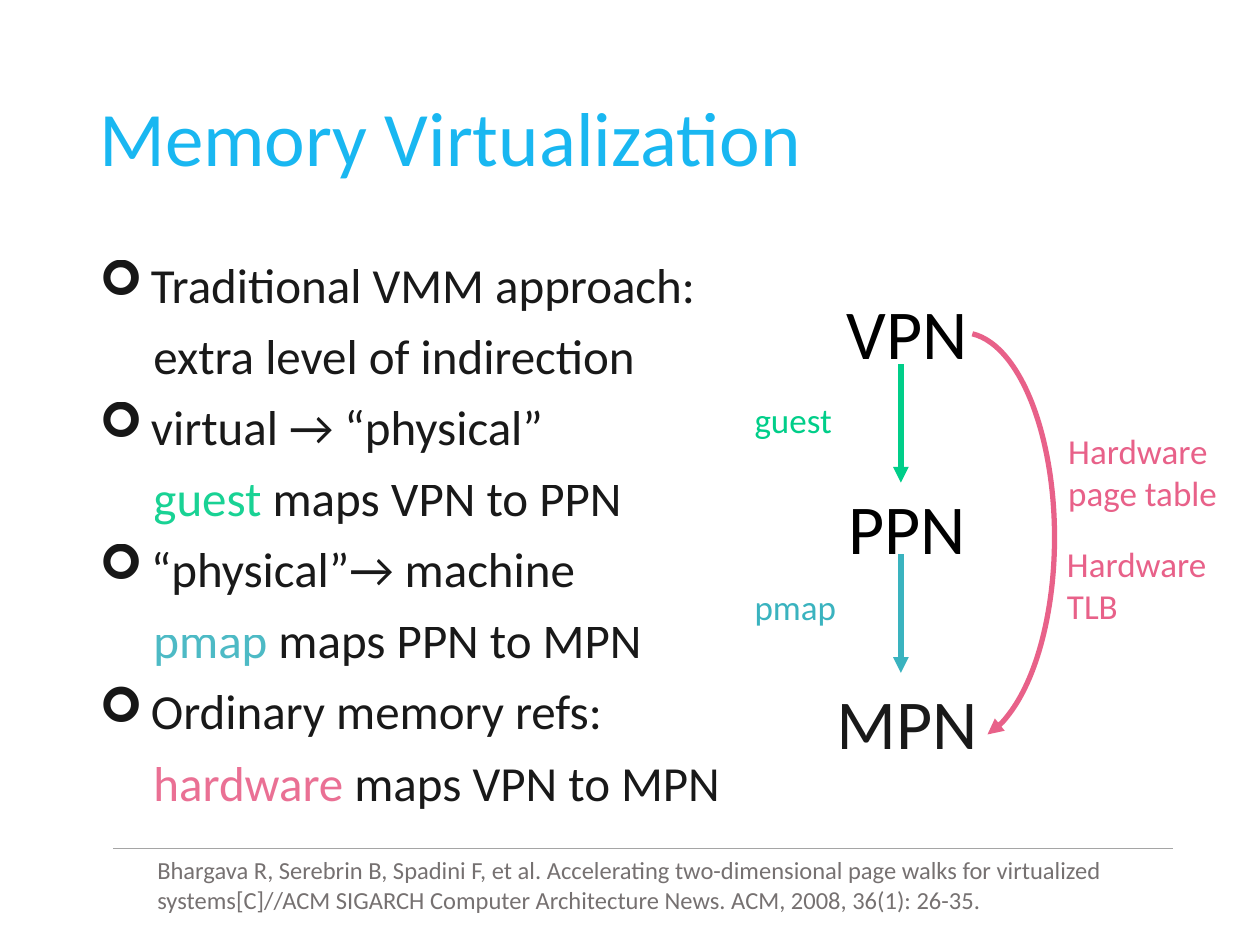
from pptx import Presentation
from pptx.util import Inches, Pt
from pptx.dml.color import RGBColor
from pptx.enum.shapes import MSO_CONNECTOR, MSO_SHAPE
from pptx.enum.text import MSO_ANCHOR, PP_ALIGN
from pptx.oxml.ns import qn
from lxml.etree import SubElement

THEME = {
    "font": "Calibri",
    "ink": "000000", "title": "00B0F0", "guest": "00CE89", "pmap": "3AB3BF",
    "hard": "E86189", "rule": "A5A5A5", "cite": "767171",
    "sizes": {"title": 44, "node": 40, "body": 28, "label": 20, "cite": 14},
}

deck = Presentation()
deck.slide_width, deck.slide_height = Inches(10), Inches(7.5)
slide = deck.slides.add_slide(deck.slide_layouts[6])
COL = deck.slide_width / 100
ROW = deck.slide_height / 75


def write(box, size, lines, fmt=None, alpha=100):
    """Add a text box; box is in columns and rows, a line is a list of (text, colour)."""
    left, top, wide, high = box
    frame = slide.shapes.add_textbox(
        int(left * COL), int(top * ROW), int(wide * COL), int(high * ROW)).text_frame
    frame.word_wrap = True
    for i, line in enumerate(lines):
        para = frame.paragraphs[0] if i == 0 else frame.add_paragraph()
        for key, val in (fmt or {}).items():
            setattr(para, key, val)
        for text, tint in line:
            run = para.add_run()
            run.text = text
            look = {"name": THEME["font"], "size": Pt(THEME["sizes"][size])}
            for key, val in look.items():
                setattr(run.font, key, val)
            run.font.color.rgb = RGBColor.from_string(THEME[tint])
            if alpha < 100:
                tone = run.font.fill._xPr.find(".//" + qn("a:srgbClr"))
                SubElement(tone, qn("a:alpha"), val=str(alpha * 1000))
    return frame


def stroke(shape, tint, width, arrow=False):
    shape.line.color.rgb = RGBColor.from_string(THEME[tint])
    shape.line.width = Pt(width)
    if arrow:
        SubElement(shape.line._get_or_add_ln(), qn("a:tailEnd"), type="triangle")
    SubElement(shape._element.spPr, qn("a:effectLst"))


# Title
head = write((6.9, 4, 86.2, 14.5), "title", [[("Memory Virtualization", "title")]],
             {"line_spacing": 0.9}, 90)
head.vertical_anchor = MSO_ANCHOR.MIDDLE

# Points: each bullet line is followed by an indented line
points = [
    ("Traditional VMM approach:", [("extra level of indirection", "ink")]),
    ("virtual → “physical”", [("guest", "guest"), (" maps VPN to PPN", "ink")]),
    ("“physical”→ machine", [("pmap", "pmap"), (" maps PPN to MPN", "ink")]),
    ("Ordinary memory refs:", [("hardware", "hard"), (" maps VPN to MPN", "ink")]),
]
lines = [line for lead, sub in points for line in ([(lead, "ink")], sub)]
body = write((6.9, 19.7, 54, 47.8), "body", lines, {"space_before": Pt(7)}, 90)
for i, para in enumerate(body.paragraphs):
    props = para._p.get_or_add_pPr()
    if i % 2 == 0:
        props.set("marL", str(Inches(0.41)))
        props.set("indent", str(-Inches(0.41)))
        SubElement(props, qn("a:buFont"), typeface="Wingdings")
        SubElement(props, qn("a:buChar"), char="➢")
    else:
        props.set("marL", str(Inches(0.43)))

# Chain of page numbers
for i, (name, alpha) in enumerate([("VPN", 100), ("PPN", 100), ("MPN", 90)]):
    write((62, 22.5 + 15.45 * i, 20, 7.8), "node", [[(name, "ink")]],
          {"alignment": PP_ALIGN.CENTER}, alpha)

# Mapping arrows and their labels
for name, start, top in [("guest", 28.9, 31.1), ("pmap", 44, 46)]:
    arrow = slide.shapes.add_connector(
        MSO_CONNECTOR.STRAIGHT, int(71.5 * COL), int(start * ROW),
        int(71.5 * COL), int((start + 9.4) * ROW))
    stroke(arrow, name, 3, True)
    write((58.9, top, 11, 4.4), "label", [[(name, name)]])

# Hardware shortcut
arc = slide.shapes.add_shape(MSO_SHAPE.ARC, int(69.1 * COL), int(26.4 * ROW),
                             int(14.6 * COL), int(32.5 * ROW))
for i, turn in enumerate([272.75, 82.79]):
    arc.adjustments[i] = turn * 0.6
arc.fill.background()
stroke(arc, "hard", 3, True)
for left, top, word in [(83.8, 33.6, "page table"), (83.7, 42.6, "TLB")]:
    write((left, top, 16, 7.7), "label", [[("Hardware", "hard")], [(word, "hard")]])

# Citation
rule = slide.shapes.add_connector(MSO_CONNECTOR.STRAIGHT, int(9 * COL), int(67.3 * ROW),
                                  int(93.1 * COL), int(67.3 * ROW))
stroke(rule, "rule", 0.5)
cite = ("Bhargava R, Serebrin B, Spadini F, et al. Accelerating two-dimensional page walks "
        "for virtualized systems[C]//ACM SIGARCH Computer Architecture News. "
        "ACM, 2008, 36(1): 26-35.")
write((11.5, 67.4, 85.4, 5.7), "cite", [[(cite, "cite")]])

deck.save("out.pptx")
